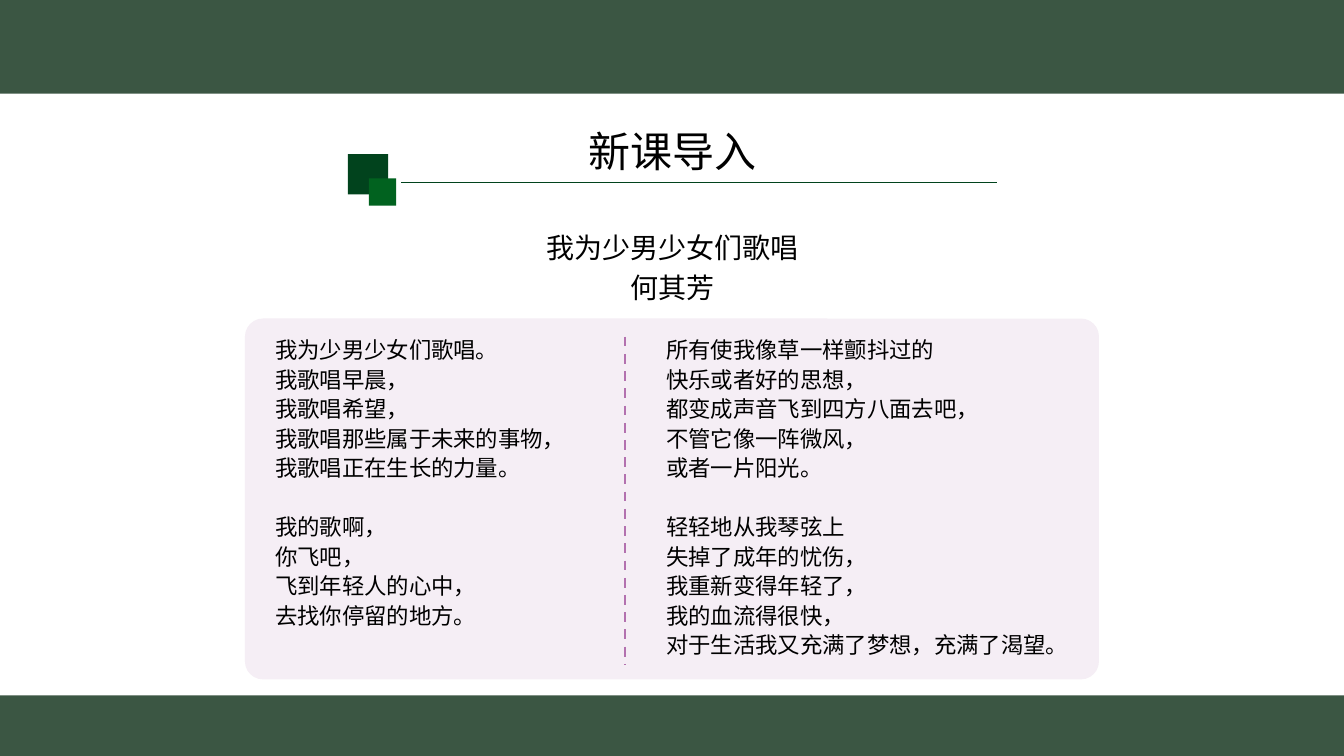
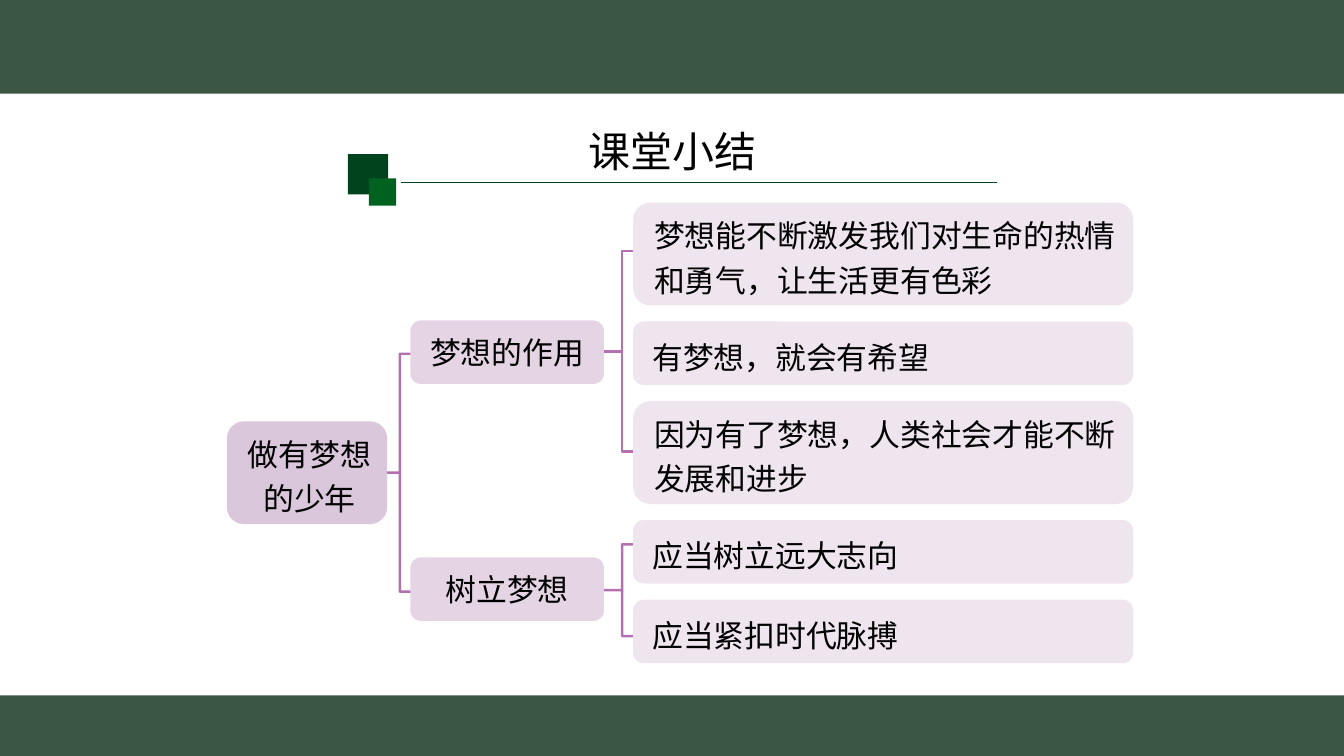
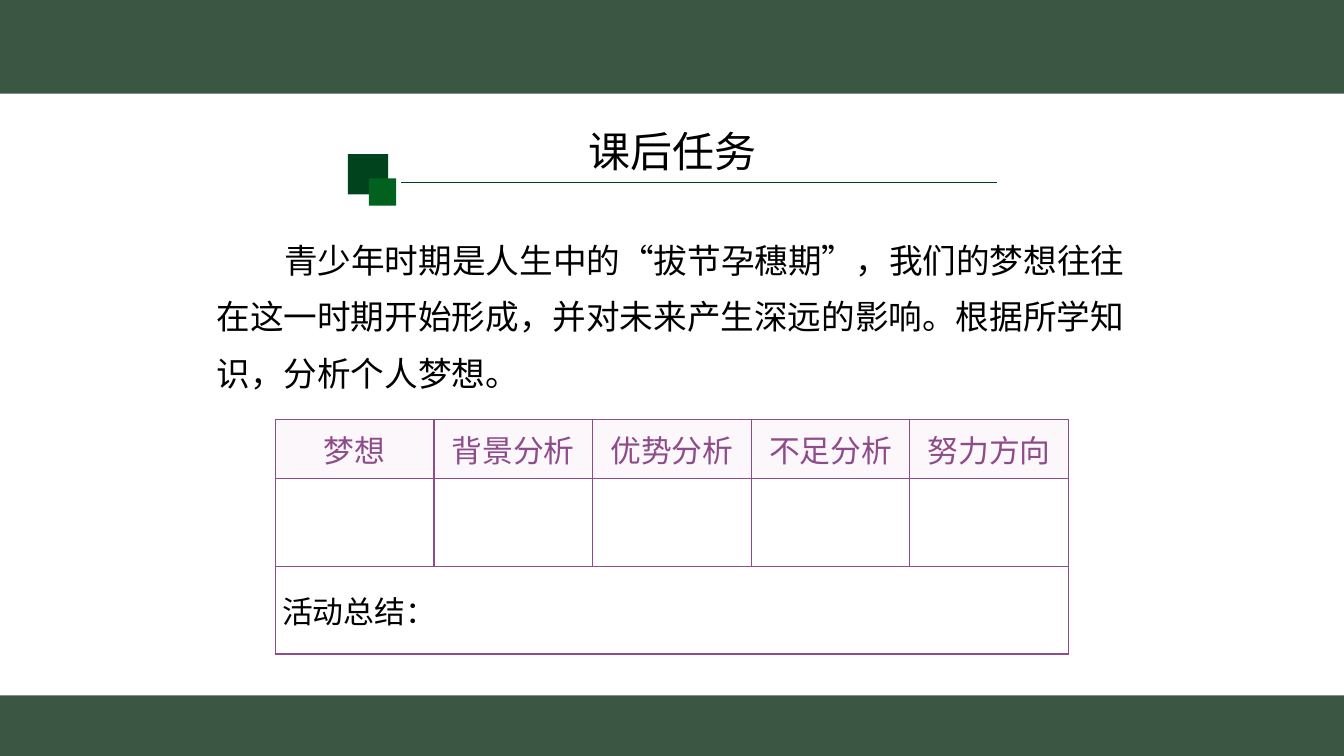
from dataclasses import dataclass

from lxml import etree
from pptx import Presentation
from pptx.dml.color import RGBColor
from pptx.enum import dml, lang, shapes, text
from pptx.oxml import ns
from pptx.util import Inches, Pt


@dataclass(frozen=True)
class Theme:
    # Colours
    band: str = "3B5643"
    dark: str = "01431D"
    leaf: str = "01621F"
    ink: str = "000000"
    rule: str = "B371AF"
    panel: str = "F5EEF5"
    root: str = "DBC7DB"
    branch: str = "E4D4E4"
    point: str = "EFE5EF"
    grid: str = "8E4C8A"
    head: str = "FBF7FB"
    blank: str = "FFFFFF"
    # Type
    font: str = "Noto Sans CJK SC"
    serif: str = "Times New Roman"
    title: int = 30
    task: int = 24
    label: int = 22
    sub: int = 20
    verse: int = 16


T = Theme()
SHAPE = shapes.MSO_SHAPE
LEFT, MID = text.PP_ALIGN.LEFT, text.PP_ALIGN.CENTER
TOP, CENTRE = text.MSO_ANCHOR.TOP, text.MSO_ANCHOR.MIDDLE

POEM_LEFT = """我为少男少女们歌唱。
我歌唱早晨，
我歌唱希望，
我歌唱那些属于未来的事物，
我歌唱正在生长的力量。

我的歌啊，
你飞吧，
飞到年轻人的心中，
去找你停留的地方。"""

POEM_RIGHT = """所有使我像草一样颤抖过的
快乐或者好的思想，
都变成声音飞到四方八面去吧，
不管它像一阵微风，
或者一片阳光。

轻轻地从我琴弦上
失掉了成年的忧伤，
我重新变得年轻了，
我的血流得很快，
对于生活我又充满了梦想，充满了渴望。"""

TASK = ("青少年时期是人生中的“拔节孕穗期”，我们的梦想往往"
        "在这一时期开始形成，并对未来产生深远的影响。"
        "根据所学知识，分析个人梦想。")


def rgb(code):
    return RGBColor.from_string(code)


def box(at):
    return [Inches(n) for n in at]


def put(frame, words, size, color=T.ink, font=T.font, align=LEFT,
        ls=1.0, gap=0, indent=0):
    """Write one paragraph a line; an empty line sets a gap before the next."""
    frame.word_wrap = True
    frame.auto_size = text.MSO_AUTO_SIZE.NONE
    para, after = frame.paragraphs[0], False
    for i, line in enumerate(words.split("\n")):
        if not line:
            after = True
            continue
        if i:
            para = frame.add_paragraph()
        para.alignment, para.line_spacing = align, ls
        if after:
            para.space_before, after = Pt(gap), False
        if indent:
            para._p.get_or_add_pPr().set("indent", str(Inches(indent)))
        run = para.add_run()
        run.text = line
        face = run.font
        face.size, face.name, face.bold = Pt(size), font, False
        face.color.rgb = rgb(color)
        face.language_id = lang.MSO_LANGUAGE_ID.SIMPLIFIED_CHINESE
        # East Asian typeface
        east = etree.SubElement(run._r.get_or_add_rPr(), ns.qn("a:ea"))
        east.set("typeface", T.font)


def note(slide, at, words, size, **form):
    put(slide.shapes.add_textbox(*box(at)).text_frame, words, size, **form)


def block(slide, at, fill, kind=SHAPE.RECTANGLE):
    part = slide.shapes.add_shape(kind, *box(at))
    part.shadow.inherit = False
    part.fill.solid()
    part.fill.fore_color.rgb = rgb(fill)
    part.line.fill.background()
    return part


def rule(slide, start, end, color, width, dash=None):
    line = slide.shapes.add_connector(
        shapes.MSO_CONNECTOR.STRAIGHT, *box(start + end))
    line.line.color.rgb, line.line.width = rgb(color), Pt(width)
    if dash:
        line.line.dash_style = dash
    etree.SubElement(line._element.spPr, ns.qn("a:effectLst"))


def base(deck, title):
    """Add a slide with bands, title and title mark."""
    slide = deck.slides.add_slide(deck.slide_layouts[5])
    block(slide, (0, 0, 13.33, 0.93), T.band)
    block(slide, (0, 6.9, 13.33, 0.6), T.band)
    # Title mark
    rule(slide, (3.98, 1.81), (9.89, 1.81), T.dark, 1)
    block(slide, (3.45, 1.53, 0.4, 0.4), T.dark)
    block(slide, (3.66, 1.77, 0.27, 0.27), T.leaf)
    # Title
    head = slide.shapes.title
    head.left, head.top, head.width, head.height = box((2.18, 1.25, 8.98, 0.63))
    head.text_frame.vertical_anchor = TOP
    put(head.text_frame, title, T.title, align=MID, ls=0.9)
    return slide


def poem(slide, x, y, w, h):
    """Panel with two columns of verse and a dashed divider."""
    panel = block(slide, (x, y, w, h), T.panel, SHAPE.ROUNDED_RECTANGLE)
    panel.adjustments[0] = 0.05
    for dx, verse in ((0.2, POEM_LEFT), (4.08, POEM_RIGHT)):
        note(slide, (x + dx, y + 0.1, 4.25, h - 0.2), verse, T.verse,
             ls=1.1, gap=21)
    mid = x + 3.77
    rule(slide, (mid, y + 0.18), (mid, y + h - 0.15), T.rule, 1.75,
         dml.MSO_LINE.DASH)


def brace(slide, at):
    part = slide.shapes.add_shape(SHAPE.LEFT_BRACE, *box(at))
    part.shadow.inherit = False
    part.fill.background()
    part.line.color.rgb, part.line.width = rgb(T.rule), Pt(1.75)
    part.adjustments[0], part.adjustments[1] = 0, 0.5


def node(slide, at, fill, words, align=MID, ls=1.2, pad=0.05):
    part = block(slide, at, fill, SHAPE.ROUNDED_RECTANGLE)
    frame = part.text_frame
    frame.vertical_anchor = CENTRE
    frame.margin_left, frame.margin_right = Inches(pad), Inches(0.05)
    put(frame, words, T.label, align=align, ls=ls)


def tree(slide, x, y):
    """Root, branches and points, joined by square braces."""
    for dx, dy, w, h in ((1.52, 1.5, 0.39, 2.36),
                         (3.66, 0.48, 0.52, 1.99),
                         (3.66, 3.39, 0.52, 0.91)):
        brace(slide, (x + dx, y + dy, w, h))
    node(slide, (x, y + 2.17, 1.59, 1.02), T.root, "做有梦想的少年", pad=0.1)
    for dy, words in ((1.17, "梦想的作用"), (3.52, "树立梦想")):
        node(slide, (x + 1.82, y + dy, 1.92, 0.63), T.branch, words, ls=1.0)
    # Points stack with an equal gap; long ones take two lines
    top = y
    for words in ("梦想能不断激发我们对生命的热情和勇气，让生活更有色彩",
                  "有梦想，就会有希望",
                  "因为有了梦想，人类社会才能不断发展和进步",
                  "应当树立远大志向",
                  "应当紧扣时代脉搏"):
        h = 1.02 if len(words) > 15 else 0.63
        node(slide, (x + 4.03, top, 4.96, h), T.point, words,
             align=LEFT, pad=0.16)
        top += h + 0.16


def border(cell):
    props = cell._tc.get_or_add_tcPr()
    for i, side in enumerate(("lnL", "lnR", "lnT", "lnB")):
        edge = etree.Element(ns.qn("a:" + side), w=str(Pt(1)))
        fill = etree.SubElement(edge, ns.qn("a:solidFill"))
        etree.SubElement(fill, ns.qn("a:srgbClr"), val=T.grid)
        props.insert(i, edge)


def sheet(slide, x, y, w):
    """Table with headings, a row to fill in and a summary row."""
    heads = ("梦想", "背景分析", "优势分析", "不足分析", "努力方向")
    highs = (0.59, 0.87, 0.87)
    table = slide.shapes.add_table(
        len(highs), len(heads), *box((x, y, w, sum(highs)))).table
    table.horz_banding = False
    for col in table.columns:
        col.width = Inches(w / len(heads))
    for i, high in enumerate(highs):
        table.rows[i].height = Inches(high)
        for cell in table.rows[i].cells:
            cell.fill.solid()
            cell.fill.fore_color.rgb = rgb(T.blank if i else T.head)
            cell.vertical_anchor = CENTRE
            cell.margin_left = cell.margin_right = Inches(0.07)
            cell.margin_top = cell.margin_bottom = 0
            border(cell)
    for i, words in enumerate(heads):
        put(table.cell(0, i).text_frame, words, T.label, color=T.grid,
            align=MID)
    last = table.cell(2, 0)
    last.merge(table.cell(2, len(heads) - 1))
    put(last.text_frame, "活动总结：", T.label)


def main():
    deck = Presentation()
    deck.slide_width, deck.slide_height = Inches(13.33), Inches(7.5)

    # Lead-in poem
    slide = base(deck, "新课导入")
    poem(slide, 2.43, 3.16, 8.47, 3.58)
    note(slide, (4.97, 2.17, 3.4, 0.89), "我为少男少女们歌唱\n何其芳", T.sub,
         align=MID, ls=1.2)

    # Summary tree
    tree(base(deck, "课堂小结"), 2.25, 2.01)

    # Homework
    slide = base(deck, "课后任务")
    note(slide, (2.05, 2.17, 9.3, 1.75), TASK, T.task, font=T.serif,
         ls=1.4, indent=0.67)
    sheet(slide, 2.73, 4.16, 7.87)

    deck.save("out.pptx")


if __name__ == "__main__":
    main()
